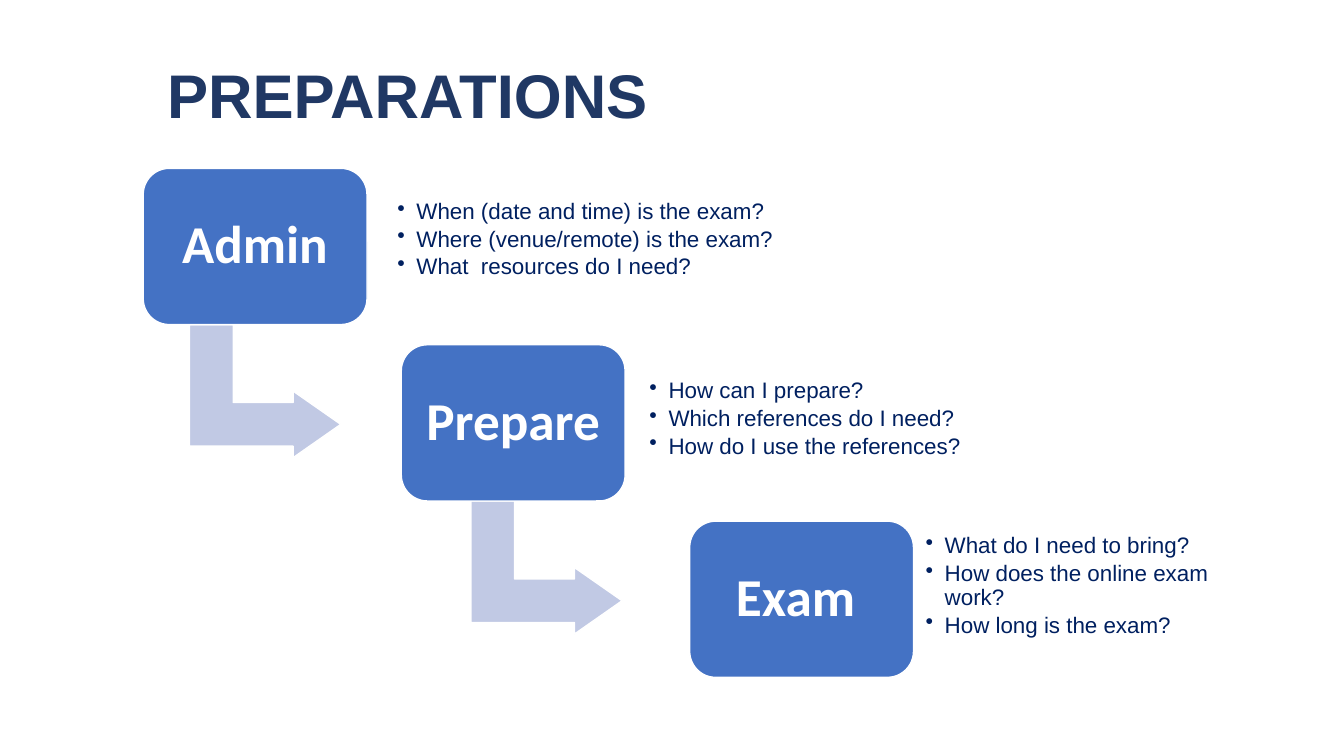
from lxml import etree
from pptx import Presentation
from pptx import util as u
from pptx.dml.color import RGBColor
from pptx.enum import shapes, text
from pptx.oxml.ns import qn

PX = 9144
COLORS = {"title": "203864", "box": "4472C4", "arrow": "C1C9E4", "white": "FFFFFF", "note": "002060"}
FIRST_TOP, STEP_PITCH = 167, 175
BOX_WIDTH, BOX_HEIGHT = 222, 155
STEPS = [
    ("Admin", 142, (387, 175, 622, 126), 55,
     ["When (date and time) is the exam?", "Where (venue/remote) is the exam?", "What  resources do I need?"]),
    ("Prepare", 398, (637, 353, 531, 126), 78,
     ["How can I prepare?", "Which references do I need?", "How do I use the references?"]),
    ("Exam ", 684, (911, 519, 331, 125), None,
     ["What do I need to bring?", "How does the online exam work?", "How long is the exam?"]),
]


def px(*lengths):
    """Turn px lengths into EMU."""
    return [u.Emu(length * PX) for length in lengths]


def color(name):
    """Return a named colour."""
    return RGBColor.from_string(COLORS[name])


def set_frame(shape, inset_x, inset_y):
    """Wrap the text, centre it vertically and set its insets."""
    frame = shape.text_frame
    frame.word_wrap = True
    frame.vertical_anchor = text.MSO_ANCHOR.MIDDLE
    frame.margin_left, frame.margin_right = px(inset_x, inset_x)
    frame.margin_top, frame.margin_bottom = px(inset_y, inset_y)
    return frame


def write(paragraph, words, size, font_name, color_name, bold=False):
    """Add one styled run to a paragraph."""
    paragraph.line_spacing = 0.9
    run = paragraph.add_run()
    run.text = words
    run.font.size = u.Pt(size)
    run.font.name = font_name
    run.font.bold = bold
    run.font.color.rgb = color(color_name)


def add_filled(slide, preset, box, fill, adjustments):
    """Add a filled preset shape with a thin white outline."""
    shape = slide.shapes.add_shape(preset, *px(*box))
    shape.shadow.inherit = False
    for index, value in enumerate(adjustments):
        shape.adjustments[index] = value
    shape.fill.solid()
    shape.fill.fore_color.rgb = color(fill)
    shape.line.color.rgb = color("white")
    shape.line.width = u.Pt(1)
    return shape


def add_title(slide, box, words):
    """Add the slide heading."""
    frame = set_frame(slide.shapes.add_textbox(*px(*box)), 10, 5)
    write(frame.paragraphs[0], words, 44, "Arial", "title", True)


def add_step(slide, box, label, arrow_offset):
    """Add a step box and, when it has a successor, its bent arrow."""
    left, top, width, height = box
    if arrow_offset is not None:
        arrow = add_filled(slide, shapes.MSO_SHAPE.BENT_UP_ARROW,
                           (left + arrow_offset, top + height - 9, 132, 150),
                           "arrow", (0.328, 0.25, 0.358))
        arrow.rotation = 90
    step = add_filled(slide, shapes.MSO_SHAPE.ROUNDED_RECTANGLE, box, "box", (0.167,))
    paragraph = set_frame(step, 16, 16).paragraphs[0]
    paragraph.alignment = text.PP_ALIGN.CENTER
    write(paragraph, label, 38, "Calibri", "white", True)


def add_notes(slide, box, questions):
    """Add the bulleted questions beside a step."""
    frame = set_frame(slide.shapes.add_textbox(*px(*box)), 7, 7)
    for index, question in enumerate(questions):
        paragraph = frame.add_paragraph() if index else frame.paragraphs[0]
        paragraph.space_after = u.Pt(2.4)
        properties = paragraph._p.get_or_add_pPr()
        properties.set("marL", str(19 * PX))
        properties.set("indent", str(-19 * PX))
        etree.SubElement(properties, qn("a:buChar")).set("char", "•")
        write(paragraph, question, 16, "Arial", "note")


def main():
    """Build and save the slide."""
    presentation = Presentation()
    presentation.slide_width, presentation.slide_height = px(1333, 750)
    slide = presentation.slides.add_slide(presentation.slide_layouts[6])
    add_title(slide, (156, 55, 1086, 85), "PREPARATIONS")
    for index, (label, left, notes_box, arrow_offset, questions) in enumerate(STEPS):
        top = FIRST_TOP + index * STEP_PITCH
        add_step(slide, (left, top, BOX_WIDTH, BOX_HEIGHT), label, arrow_offset)
        add_notes(slide, notes_box, questions)
    presentation.save("out.pptx")


if __name__ == "__main__":
    main()
